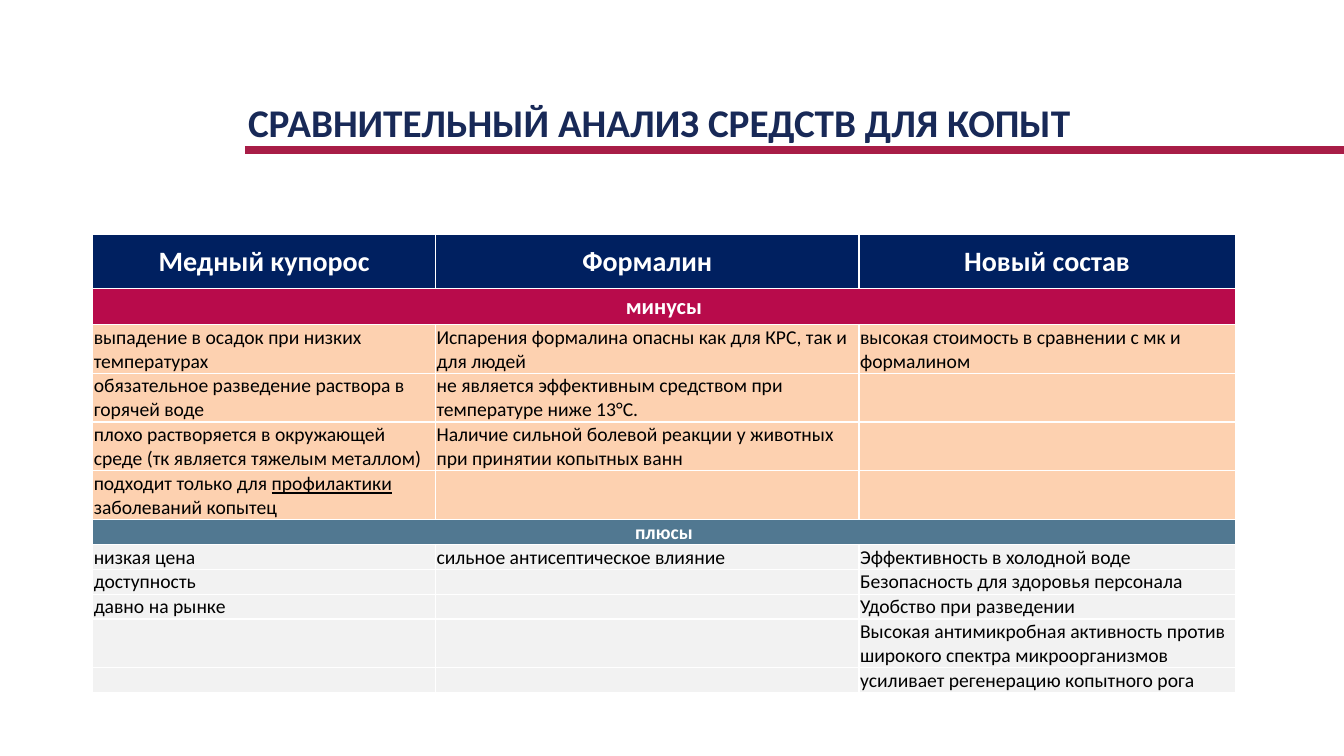
from lxml.etree import SubElement
from pptx import Presentation
from pptx.dml.color import RGBColor
from pptx.enum.text import MSO_ANCHOR, PP_ALIGN
from pptx.oxml.ns import qn
from pptx.util import Inches, Pt

TITLE = "СРАВНИТЕЛЬНЫЙ АНАЛИЗ СРЕДСТВ ДЛЯ КОПЫТ"
AGENTS = ["Медный купорос", "Формалин", "Новый состав"]
MINUSES = [
    ["выпадение в осадок при низких температурах",
     "Испарения формалина опасны как для КРС, так и для людей",
     "высокая стоимость в сравнении с мк и формалином"],
    ["обязательное разведение раствора в горячей воде",
     "не является эффективным средством при температуре ниже 13°C.", ""],
    ["плохо растворяется в окружающей среде (тк является тяжелым металлом)",
     "Наличие сильной болевой реакции у животных при принятии копытных ванн", ""],
    ["подходит только для _профилактики_ заболеваний копытец", "", ""],
]
PLUSES = [
    ["низкая цена", "сильное антисептическое влияние", "Эффективность в холодной воде"],
    ["доступность", "", "Безопасность для здоровья персонала"],
    ["давно на рынке", "", "Удобство при разведении"],
    ["", "", "Высокая антимикробная активность против широкого спектра микроорганизмов"],
    ["", "", "усиливает регенерацию копытного рога"],
]
LINE_H = 0.24
COLS = [3.4, 4.2, 3.73]
BODY = dict(size=14, bold=False, color="000000")
HEAD = dict(size=20, bold=True, color="FFFFFF")
MIDDLE, BOTTOM = MSO_ANCHOR.MIDDLE, MSO_ANCHOR.BOTTOM

# (cell texts, height, fill, anchor, font); a single text spans the row
ROWS = [
    (AGENTS, 0.53, "002060", MIDDLE, HEAD),
    (["минусы"], 0.36, "B80B4B", MIDDLE, HEAD | {"size": 16}),
    *[(texts, 2 * LINE_H, "FDD1B0", BOTTOM, BODY) for texts in MINUSES],
    (["плюсы"], LINE_H, "517891", BOTTOM, HEAD | {"size": 14}),
    *[(texts, LINE_H * (2 if len(texts[2]) > 40 else 1), "F2F2F2", BOTTOM, BODY)
      for texts in PLUSES],
]


def rgb(value):
    return RGBColor.from_string(value)


def write(p, text, size, bold, color):
    """Write text into p; parts between underscores are underlined."""
    if not text:
        SubElement(p._p, qn("a:endParaRPr"), sz=str(size * 100))
        return
    for i, part in enumerate(text.split("_")):
        r = p.add_run()
        r.text = part
        for name, value in dict(name="Calibri", size=Pt(size), bold=bold,
                                underline=i % 2 == 1).items():
            setattr(r.font, name, value)
        r.font.color.rgb = rgb(color)


def add_borders(cell, color="FFFFFF"):
    tcPr = cell._tc.get_or_add_tcPr()
    for i, side in enumerate(("lnL", "lnR", "lnT", "lnB")):
        ln = tcPr.makeelement(qn("a:" + side), {"w": str(Pt(1))})
        SubElement(SubElement(ln, qn("a:solidFill")), qn("a:srgbClr"), val=color)
        tcPr.insert(i, ln)


prs = Presentation()
prs.slide_width, prs.slide_height = Inches(13.33), Inches(7.5)
s = prs.slides.add_slide(prs.slide_layouts[5])

rule = s.shapes.add_connector(1, Inches(2.43), Inches(1.49), prs.slide_width, Inches(1.49))
rule.line.color.rgb, rule.line.width = rgb("A81D47"), Pt(6)
SubElement(rule._element.spPr, qn("a:effectLst"))

title = s.shapes.title
title.left, title.top, title.width, title.height = map(Inches, (2.46, 0.97, 11.34, 0.47))
tf = title.text_frame
tf.margin_left = tf.margin_right = tf.margin_top = tf.margin_bottom = 0
tf.vertical_anchor, tf.word_wrap = MIDDLE, True
tf.paragraphs[0].alignment = PP_ALIGN.LEFT
write(tf.paragraphs[0], TITLE, 28, True, "182957")

table = s.shapes.add_table(len(ROWS), len(COLS), Inches(0.92), Inches(2.33),
                           Inches(sum(COLS)), Inches(sum(row[1] for row in ROWS))).table
for col, width in zip(table.columns, COLS):
    col.width = Inches(width)
for i, (texts, height, fill, anchor, font) in enumerate(ROWS):
    table.rows[i].height = Inches(height)
    if len(texts) == 1:
        table.cell(i, 0).merge(table.cell(i, len(COLS) - 1))
    for j in range(len(COLS)):
        cell = table.cell(i, j)
        cell.margin_left = cell.margin_right = cell.margin_top = Inches(0.01)
        cell.margin_bottom = 0
        cell.vertical_anchor = anchor
        cell.fill.solid()
        cell.fill.fore_color.rgb = rgb(fill)
        add_borders(cell)
        p = cell.text_frame.paragraphs[0]
        p.alignment = PP_ALIGN.CENTER if font["bold"] else PP_ALIGN.LEFT
        write(p, texts[j] if j < len(texts) else "", **font)

prs.save("out.pptx")
